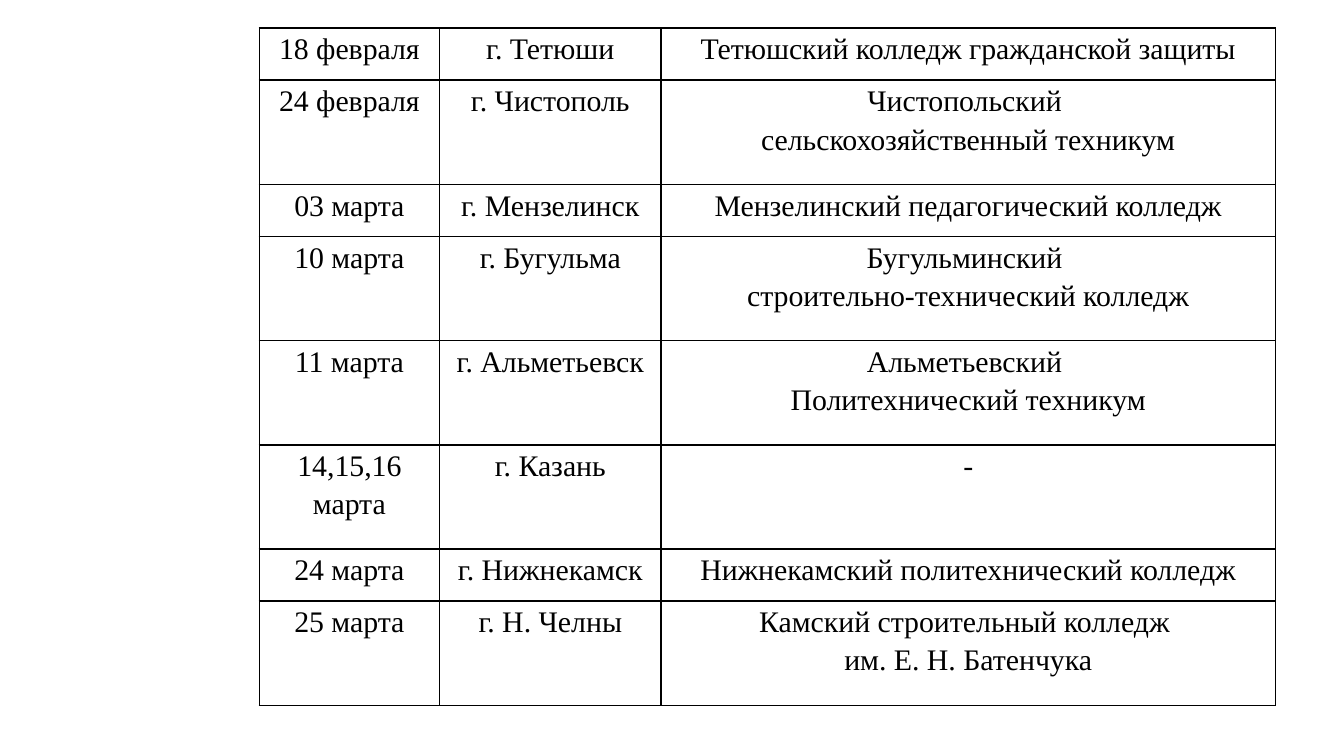
"""Build a slide with a schedule of college visits by date and town."""
from lxml.etree import SubElement
from pptx import Presentation
from pptx.dml.color import RGBColor
from pptx.enum.text import PP_ALIGN
from pptx.oxml.ns import qn
from pptx.util import Inches, Pt


def color(value):
    return RGBColor.from_string(value)


def add_borders(cell, value, width):
    properties = cell._tc.get_or_add_tcPr()
    for position, side in enumerate(("a:lnL", "a:lnR", "a:lnT", "a:lnB")):
        line = properties.makeelement(qn(side), {"w": str(width)})
        properties.insert(position, line)
        fill = SubElement(line, qn("a:solidFill"))
        SubElement(fill, qn("a:srgbClr"), val=value)


BLACK = "000000"
LINE_HEIGHT = 5.04 / 13
column_widths = [1.34, 1.65, 4.57]
visits = [
    (1, "18 февраля", "г. Тетюши", "Тетюшский колледж гражданской защиты"),
    (2, "24 февраля", "г. Чистополь", "Чистопольский \nсельскохозяйственный техникум"),
    (1, "03 марта", "г. Мензелинск", "Мензелинский педагогический колледж"),
    (2, "10 марта", "г. Бугульма", "Бугульминский \nстроительно-технический колледж"),
    (2, "11 марта", "г. Альметьевск", "Альметьевский \nПолитехнический техникум"),
    (2, "14,15,16 марта", "г. Казань", "-"),
    (1, "24 марта", "г. Нижнекамск", "Нижнекамский политехнический колледж"),
    (2, "25 марта", "г. Н. Челны", "Камский строительный колледж \nим. Е. Н. Батенчука"),
]

presentation = Presentation()
presentation.slide_width = Inches(10)
presentation.slide_height = Inches(10 * 9 / 16)
slide = presentation.slides.add_slide(presentation.slide_layouts[6])

schedule = slide.shapes.add_table(
    len(visits), len(column_widths),
    Inches(1.93), Inches(0.21), Inches(7.56), Inches(5.04),
).table
schedule.first_row = False
schedule.horz_banding = False
for column, width in zip(schedule.columns, column_widths):
    column.width = Inches(width)

for row, (line_count, *entries) in zip(schedule.rows, visits):
    row.height = Inches(LINE_HEIGHT * line_count)
    for cell, entry in zip(row.cells, entries):
        cell.margin_left = cell.margin_right = Inches(0.07)
        cell.margin_top = cell.margin_bottom = 0
        cell.fill.background()
        add_borders(cell, BLACK, Pt(1))
        for index, text in enumerate(entry.split("\n")):
            frame = cell.text_frame
            paragraph = frame.add_paragraph() if index else frame.paragraphs[0]
            paragraph.alignment = PP_ALIGN.CENTER
            paragraph.line_spacing = 1.15
            run = paragraph.add_run()
            run.text = text
            run.font.name = "Times New Roman"
            run.font.size = Pt(16)
            run.font.color.rgb = color(BLACK)

presentation.save("out.pptx")
